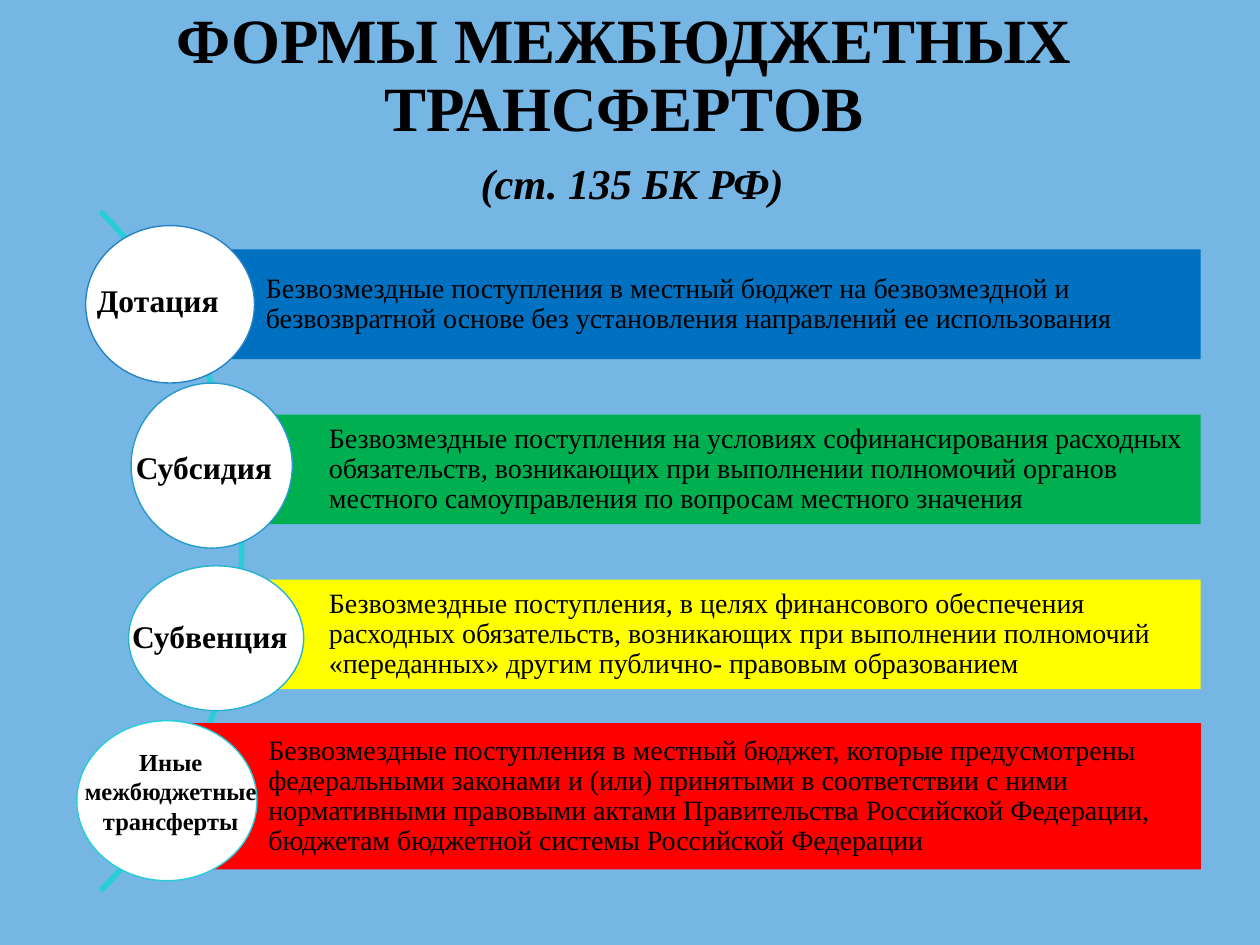
import pptx
import pptx.util
import pptx.dml.color
import pptx.enum.shapes
import pptx.enum.text

Inches, Pt = pptx.util.Inches, pptx.util.Pt
SHAPE = pptx.enum.shapes.MSO_SHAPE
ALIGN = pptx.enum.text.PP_ALIGN
ANCHOR = pptx.enum.text.MSO_ANCHOR

# Content
TITLE = "ФОРМЫ МЕЖБЮДЖЕТНЫХ ТРАНСФЕРТОВ\v "
SOURCE_LAW = "(ст. 135 БК РФ)"

# Lengths in inches; circle and label: left, top, width, height
TRANSFERS = [
    dict(name="Дотация", bar_left=1.42, fill="blue", ring="ring1",
         circle=(0.68, 1.79, 1.34, 1.25), label=(0.67, 2.18, 1.26, 0.4),
         text="Безвозмездные поступления в местный бюджет на безвозмездной и "
              "безвозвратной основе без установления направлений ее использования"),
    dict(name="Субсидия", bar_left=1.92, fill="green", ring="ring2",
         circle=(1.04, 3.04, 1.28, 1.31), label=(0.98, 3.51, 1.3, 0.4),
         text="Безвозмездные поступления на условиях софинансирования расходных "
              "обязательств, возникающих при выполнении полномочий органов "
              "местного самоуправления по вопросам местного значения"),
    dict(name="Субвенция", bar_left=1.92, fill="yellow", ring="ring3",
         circle=(1.02, 4.49, 1.39, 1.15), label=(0.95, 4.85, 1.5, 0.4),
         text="Безвозмездные поступления, в целях финансового обеспечения "
              "расходных обязательств, возникающих при выполнении полномочий "
              "«переданных» другим публично- правовым образованием"),
    dict(name="Иные межбюджетные трансферты", bar_left=1.44, fill="red", ring="arc",
         circle=(0.61, 5.72, 1.43, 1.27), label=(0.55, 5.88, 1.61, 0.81),
         label_size=14, label_align=ALIGN.CENTER, bar_top=5.74, bar_height=1.16,
         text="Безвозмездные поступления в местный бюджет, которые предусмотрены "
              "федеральными законами и (или) принятыми в соответствии с ними "
              "нормативными правовыми актами Правительства Российской Федерации, "
              "бюджетам бюджетной системы Российской Федерации"),
]
COLORS = dict(background="75B6E5", text="000000", white="FFFFFF", blue="0070C0",
              green="00B050", yellow="FFFF00", red="FF0000", ring1="2683C6",
              ring2="269BCC", ring3="27B4D1", arc="27CED7")
FONT = "Times New Roman"
BAR_TOP, BAR_STEP, BAR_HEIGHT, BAR_RIGHT = 1.98, 1.31, 0.87, 9.53
BAR_FRAME = dict(word_wrap=True, vertical_anchor=ANCHOR.MIDDLE,
                 margin_left=Inches(0.69), margin_right=Inches(0.04),
                 margin_top=Inches(0.04), margin_bottom=Inches(0.04))
ARC_BOX = (-5.7, 0.56, 7.63, 7.63)
ARC_ANGLES = (189, 27, 0.003)


def rgb(name):
    return pptx.dml.color.RGBColor.from_string(COLORS[name])


def apply(target, values):
    for key, value in values.items():
        setattr(target, key, value)


def add_run(paragraph, text, size, **style):
    run = paragraph.add_run()
    run.text = text
    apply(run.font, dict(name=FONT, size=Pt(size), **style))
    run.font.color.rgb = rgb("text")


def add_shape(slide, kind, box, fill=None, line=None, width=0.79):
    shape = slide.shapes.add_shape(kind, *map(Inches, box))
    shape.shadow.inherit = False
    if fill:
        shape.fill.solid()
        shape.fill.fore_color.rgb = rgb(fill)
    else:
        shape.fill.background()
    if line:
        shape.line.color.rgb = rgb(line)
        shape.line.width = Pt(width)
    else:
        shape.line.fill.background()
    return shape


def add_title(slide):
    title = slide.shapes.title
    apply(title, dict(left=Inches(0.35), top=Inches(0.21),
                      width=Inches(9.21), height=Inches(1.34)))
    apply(title.text_frame, dict(word_wrap=True, vertical_anchor=ANCHOR.MIDDLE,
                                 auto_size=pptx.enum.text.MSO_AUTO_SIZE.NONE))
    heading = title.text_frame.paragraphs[0]
    apply(heading, dict(alignment=ALIGN.CENTER, line_spacing=0.9))
    first_line, gap = TITLE.split("\v")
    add_run(heading, first_line, 36, bold=True)
    heading.add_line_break()
    add_run(heading, gap, 36, bold=True)
    add_run(heading, SOURCE_LAW, 24.3, bold=True, italic=True)


def add_transfer(slide, row, transfer):
    # Bar with the description
    left = transfer["bar_left"]
    top = transfer.get("bar_top", BAR_TOP + row * BAR_STEP)
    height = transfer.get("bar_height", BAR_HEIGHT)
    bar = add_shape(slide, SHAPE.RECTANGLE, (left, top, BAR_RIGHT - left, height),
                    transfer["fill"])
    apply(bar.text_frame, BAR_FRAME)
    description = bar.text_frame.paragraphs[0]
    apply(description, dict(alignment=ALIGN.LEFT, line_spacing=0.9))
    add_run(description, transfer["text"], 16)

    # Circle with the name over it
    add_shape(slide, SHAPE.OVAL, transfer["circle"], "white", transfer["ring"])
    label = slide.shapes.add_textbox(*map(Inches, transfer["label"]))
    label.text_frame.word_wrap = True
    name = label.text_frame.paragraphs[0]
    name.alignment = transfer.get("label_align", ALIGN.LEFT)
    add_run(name, transfer["name"], transfer.get("label_size", 18), bold=True)


def main():
    deck = pptx.Presentation()
    apply(deck, dict(slide_width=Inches(10), slide_height=Inches(7.5)))
    slide = deck.slides.add_slide(deck.slide_layouts[5])
    slide.background.fill.solid()
    slide.background.fill.fore_color.rgb = rgb("background")
    add_title(slide)

    # Arc that links the circles
    arc = add_shape(slide, SHAPE.BLOCK_ARC, ARC_BOX, line="arc", width=1.5)
    for index, value in enumerate(ARC_ANGLES):
        arc.adjustments[index] = value

    for row, transfer in enumerate(TRANSFERS):
        add_transfer(slide, row, transfer)
    deck.save("out.pptx")


if __name__ == "__main__":
    main()
